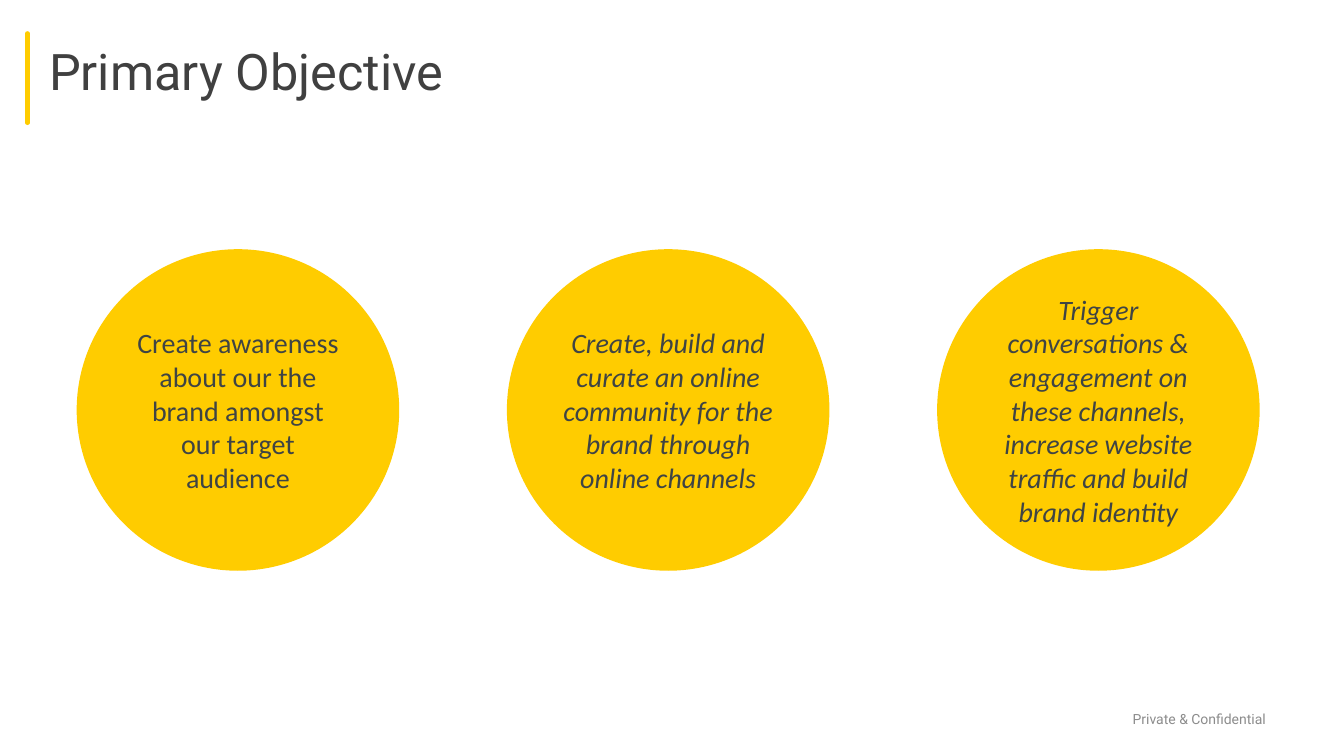
from dataclasses import dataclass

from lxml.etree import SubElement
from pptx import Presentation
from pptx.dml.color import RGBColor as RGB
from pptx.enum.shapes import MSO_CONNECTOR as Connector, MSO_SHAPE as Shape
from pptx.enum.text import MSO_ANCHOR as Anchor, PP_ALIGN as Align
from pptx.oxml.ns import qn
from pptx.util import Pt


@dataclass(frozen=True)
class Theme:
    accent: RGB = RGB(0xFF, 0xCC, 0x00)
    title: RGB = RGB(0x40, 0x40, 0x40)
    body: RGB = RGB(0x3F, 0x44, 0x44)
    footer: RGB = RGB(0x8C, 0x8C, 0x8C)
    heading_font: str = "Roboto"
    body_font: str = "Calibri"
    title_size: int = 36
    body_size: int = 20
    footer_size: int = 10


class Deck:
    def __init__(self, prs, theme):
        self.theme = theme
        self.s = prs.slides.add_slide(prs.slide_layouts[6])

    def add_words(self, tf, text, font, size, color, italic=False):
        tf.word_wrap = True
        tf.vertical_anchor = Anchor.MIDDLE
        p = tf.paragraphs[0]
        r = p.add_run()
        r.text = text
        r.font.name = font
        r.font.size = Pt(size)
        r.font.color.rgb = color
        r.font.italic = italic
        return p

    def rule(self, x, top, bottom):
        c = self.s.shapes.add_connector(
            Connector.STRAIGHT, Pt(x), Pt(top), Pt(x), Pt(bottom))
        c.line.color.rgb = self.theme.accent
        c.line.width = Pt(3)
        spPr = c._element.spPr
        spPr.find(qn("a:ln")).set("cap", "rnd")
        SubElement(spPr, qn("a:effectLst"))

    def label(self, x, y, w, h, text, size, color):
        sp = self.s.shapes.add_textbox(Pt(x), Pt(y), Pt(w), Pt(h))
        return self.add_words(
            sp.text_frame, text, self.theme.heading_font, size, color)

    def title(self, text):
        p = self.label(28.1, 20.9, 678, 64.8, text,
                       self.theme.title_size, self.theme.title)
        p.line_spacing = 0.9

    def footer(self, text):
        self.label(802, 504, 114.5, 19.4, text,
                   self.theme.footer_size, self.theme.footer)

    def circle(self, x, y, w, h, text, italic):
        sp = self.s.shapes.add_shape(Shape.OVAL, Pt(x), Pt(y), Pt(w), Pt(h))
        sp.shadow.inherit = False
        sp.fill.solid()
        sp.fill.fore_color.rgb = self.theme.accent
        sp.line.fill.background()
        tf = sp.text_frame
        tf.margin_left = tf.margin_right = Pt(6)
        tf.margin_top = tf.margin_bottom = Pt(6)
        p = self.add_words(tf, text, self.theme.body_font,
                           self.theme.body_size, self.theme.body, italic)
        p.alignment = Align.CENTER


OBJECTIVES = [
    ("Create awareness about our the brand amongst our target audience", False),
    ("Create, build and curate an online community for the brand "
     "through online channels", True),
    ("Trigger conversations & engagement on these channels, "
     "increase website traffic and build brand identity", True),
]


def main():
    prs = Presentation()
    prs.slide_width, prs.slide_height = Pt(960), Pt(540)
    deck = Deck(prs, Theme())
    deck.rule(19.6, 23.8, 87.8)
    deck.footer("Private & Confidential")
    deck.title("Primary Objective")
    left, step = 54.8, 307.3
    for i, (text, italic) in enumerate(OBJECTIVES):
        deck.circle(left + i * step, 178, 230.4, 229.7, text, italic)
    prs.save("out.pptx")


if __name__ == "__main__":
    main()
